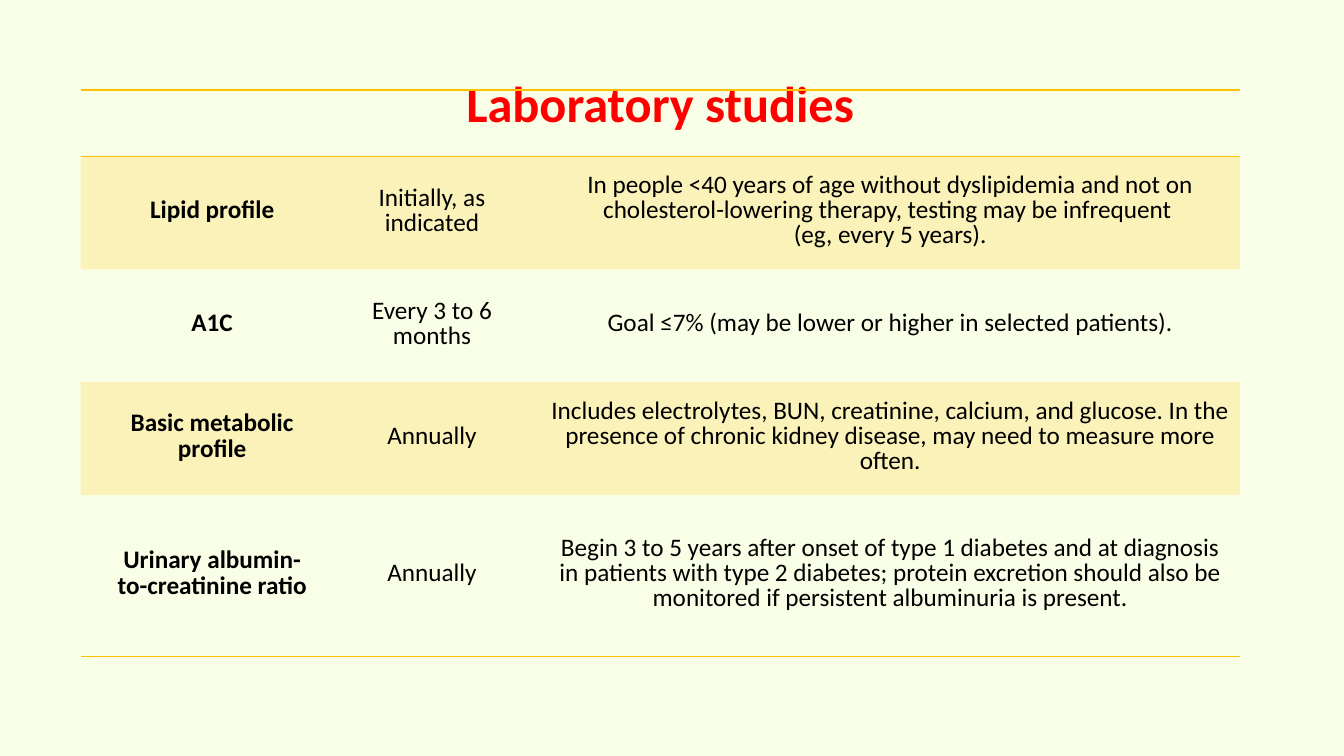
import dataclasses

import lxml.etree
import pptx
import pptx.dml.color
import pptx.enum.text
import pptx.oxml.ns
import pptx.table
import pptx.util

SLIDE_WIDTH, SLIDE_HEIGHT = 13.33, 7.5
TABLE_LEFT, TABLE_TOP = 0.06 * SLIDE_WIDTH, 0.119 * SLIDE_HEIGHT
COLUMN_WIDTHS = (2.41, 2.15, 6.94)
TITLE_HEIGHT = 0.66
PLAIN_TABLE_STYLE = "{2D5ABB26-0587-4C30-8999-92F81FD0307C}"
PAPER, RED, BLACK, AMBER = "F9FFE7", "FF0000", "000000", "FFC000"
BAND_OPACITY = 20


@dataclasses.dataclass(frozen=True)
class Study:
    name: str
    frequency: str
    remarks: str
    height: float = 1.12


STUDIES = (
    Study(
        "Lipid profile",
        "Initially, as indicated",
        "In people <40 years of age without dyslipidemia and not on "
        "cholesterol-lowering therapy, testing may be infrequent \n"
        "(eg, every 5 years).",
    ),
    Study(
        "A1C",
        "Every 3 to 6 months",
        "Goal ≤7% (may be lower or higher in selected patients).",
    ),
    Study(
        "Basic metabolic profile",
        "Annually",
        "Includes electrolytes, BUN, creatinine, calcium, and glucose. In the "
        "presence of chronic kidney disease, may need to measure more often.",
    ),
    Study(
        "Urinary albumin-to-creatinine ratio",
        "Annually",
        "Begin 3 to 5 years after onset of type 1 diabetes and at diagnosis in "
        "patients with type 2 diabetes; protein excretion should also be "
        "monitored if persistent albuminuria is present.",
        height=1.6,
    ),
)


def color(value: str) -> pptx.dml.color.RGBColor:
    return pptx.dml.color.RGBColor.from_string(value)


def add_element(parent, tag: str, **attributes: str):
    return lxml.etree.SubElement(parent, pptx.oxml.ns.qn(tag), attributes)


def write_cell(cell: pptx.table._Cell, text: str, size: int, ink: str,
               bold: bool, left_inset: float, edge_inset: float) -> None:
    cell.vertical_anchor = pptx.enum.text.MSO_ANCHOR.MIDDLE
    cell.margin_left = pptx.util.Inches(left_inset)
    cell.margin_right = pptx.util.Inches(0.09)
    cell.margin_top = cell.margin_bottom = pptx.util.Inches(edge_inset)
    cell.text_frame.text = text
    for paragraph in cell.text_frame.paragraphs:
        paragraph.alignment = pptx.enum.text.PP_ALIGN.CENTER
        paragraph.line_spacing = pptx.util.Pt(18)
        for run in paragraph.runs:
            run.font.name = "Calibri"
            run.font.size = pptx.util.Pt(size)
            run.font.bold = bold
            run.font.color.rgb = color(ink)


def rule_cell(cell: pptx.table._Cell, *sides: str) -> None:
    """Draw amber borders; call before filling, as the schema puts lines first."""
    for side in sides:
        line = add_element(cell._tc.get_or_add_tcPr(), side, w=str(pptx.util.Pt(1)))
        add_element(add_element(line, "a:solidFill"), "a:srgbClr", val=AMBER)


def band_cell(cell: pptx.table._Cell) -> None:
    """Fill the cell with translucent amber."""
    cell.fill.solid()
    cell.fill.fore_color.rgb = color(AMBER)
    tint = cell._tc.tcPr.find(pptx.oxml.ns.qn("a:solidFill"))[0]
    add_element(tint, "a:alpha", val=str(BAND_OPACITY * 1000))


def add_plain_table(slide) -> pptx.table.Table:
    heights = (TITLE_HEIGHT, *(study.height for study in STUDIES))
    frame = slide.shapes.add_table(
        len(heights), len(COLUMN_WIDTHS),
        pptx.util.Inches(TABLE_LEFT), pptx.util.Inches(TABLE_TOP),
        pptx.util.Inches(sum(COLUMN_WIDTHS)), pptx.util.Inches(sum(heights)),
    )
    table = frame.table
    table.first_row = table.horz_banding = False
    style = table._tbl.tblPr.find(pptx.oxml.ns.qn("a:tableStyleId"))
    style.text = PLAIN_TABLE_STYLE
    for column, width in zip(table.columns, COLUMN_WIDTHS):
        column.width = pptx.util.Inches(width)
    for row, height in zip(table.rows, heights):
        row.height = pptx.util.Inches(height)
    return table


def fill_title(table: pptx.table.Table) -> None:
    title_cells = list(table.rows[0].cells)
    title_cells[0].merge(title_cells[-1])
    write_cell(title_cells[0], "Laboratory studies", 36, RED, True, 0.09, 0.05)
    for cell in title_cells:
        rule_cell(cell, "a:lnT", "a:lnB")


def fill_studies(table: pptx.table.Table) -> None:
    for row, study in enumerate(STUDIES, start=1):
        texts = (study.name, study.frequency, study.remarks)
        for column, text in enumerate(texts):
            cell = table.cell(row, column)
            is_name = column == 0
            write_cell(cell, text, 18, BLACK, is_name, 0.29 if is_name else 0.09, 0.04)
            if row == len(STUDIES):
                rule_cell(cell, "a:lnB")
            if row % 2:
                band_cell(cell)


def main() -> None:
    presentation = pptx.Presentation()
    presentation.slide_width = pptx.util.Inches(SLIDE_WIDTH)
    presentation.slide_height = pptx.util.Inches(SLIDE_HEIGHT)
    slide = presentation.slides.add_slide(presentation.slide_layouts[6])
    slide.background.fill.solid()
    slide.background.fill.fore_color.rgb = color(PAPER)
    table = add_plain_table(slide)
    fill_title(table)
    fill_studies(table)
    presentation.save("out.pptx")


if __name__ == "__main__":
    main()
